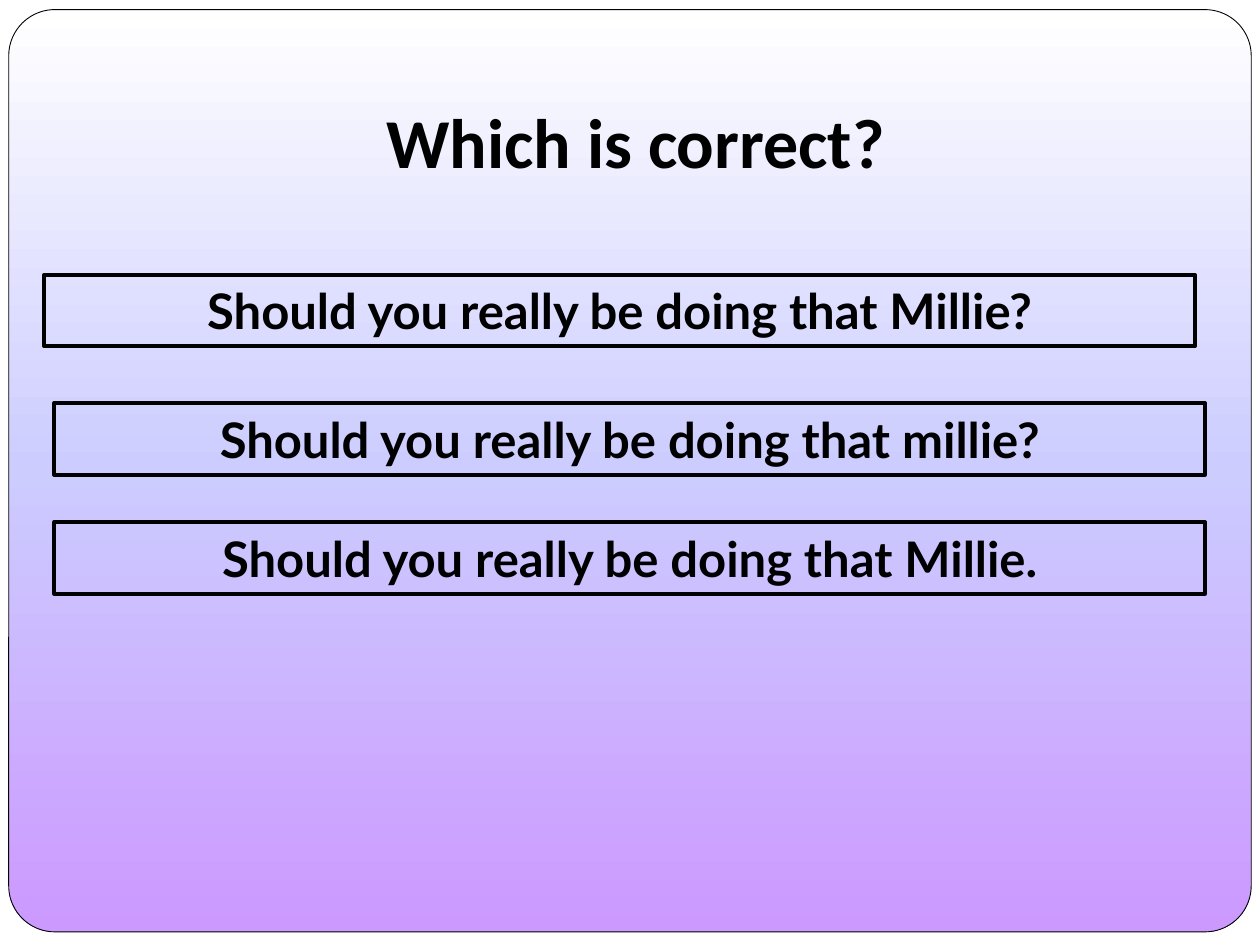
from copy import deepcopy

from pptx import Presentation
from pptx.dml.color import RGBColor
from pptx.enum.shapes import MSO_SHAPE
from pptx.enum.text import MSO_ANCHOR, PP_ALIGN
from pptx.oxml.ns import qn
from pptx.util import Pt

BLACK = RGBColor(0x00, 0x00, 0x00)
WHITE = RGBColor(0xFF, 0xFF, 0xFF)
LILAC = RGBColor(0xCC, 0xCC, 0xFF)
PURPLE = RGBColor(0xCC, 0x99, 0xFF)


def write(frame, text, font, size, anchor):
    """Put one bold centred line into a text frame."""
    frame.word_wrap = True
    frame.vertical_anchor = anchor
    para = frame.paragraphs[0]
    para.alignment = PP_ALIGN.CENTER
    run = para.add_run()
    run.text = text
    run.font.name = font
    run.font.size = Pt(size)
    run.font.bold = True
    run.font.color.rgb = BLACK


def add_box(slide, kind, left, top, width, height, weight):
    """Add a black-outlined shape without shadow."""
    box = slide.shapes.add_shape(kind, Pt(left), Pt(top), Pt(width), Pt(height))
    box.shadow.inherit = False
    box.line.color.rgb = BLACK
    box.line.width = Pt(weight)
    return box


def add_panel(slide, left, top, width, height):
    """Rounded panel shading from white to purple, top to bottom."""
    panel = add_box(slide, MSO_SHAPE.ROUNDED_RECTANGLE,
                    left, top, width, height, 0.5)
    panel.adjustments[0] = 0.05
    panel.fill.gradient()
    panel.fill.gradient_angle = 270
    # The default gradient has two stops; a third is needed
    stops = panel.element.spPr.find(qn("a:gradFill")).find(qn("a:gsLst"))
    stops.append(deepcopy(stops[-1]))
    colors = (WHITE, LILAC, PURPLE)
    for i, (stop, color) in enumerate(zip(panel.fill.gradient_stops, colors)):
        stop.position = i / 2
        stop.color.rgb = color


def add_title(slide, left, top, width, height):
    box = slide.shapes.add_textbox(Pt(left), Pt(top), Pt(width), Pt(height))
    frame = box.text_frame
    frame.margin_bottom = Pt(7.2)
    write(frame, "Which is correct?", "Calibri", 40, MSO_ANCHOR.BOTTOM)


def add_choice(slide, text, left, top, width, height):
    box = add_box(slide, MSO_SHAPE.RECTANGLE, left, top, width, height, 2.25)
    box.fill.background()
    write(box.text_frame, text, "Lato", 28, MSO_ANCHOR.TOP)


def main():
    deck = Presentation()
    deck.slide_width, deck.slide_height = Pt(720), Pt(540)
    slide = deck.slides.add_slide(deck.slide_layouts[6])

    # Backdrop
    slide.background.fill.solid()
    slide.background.fill.fore_color.rgb = WHITE
    add_panel(slide, 5, 5.5, 710, 527)

    # Question
    add_title(slide, 42.5, 21.6, 641.5, 90)

    # Answers; the first one sits slightly further left
    choices = (
        ("Should you really be doing that Millie?", 25.2, 157),
        ("Should you really be doing that millie?", 31, 230.4),
        ("Should you really be doing that Millie.", 31, 298.4),
    )
    for text, left, top in choices:
        add_choice(slide, text, left, top, 657.5, 41)

    deck.save("out.pptx")


if __name__ == "__main__":
    main()
